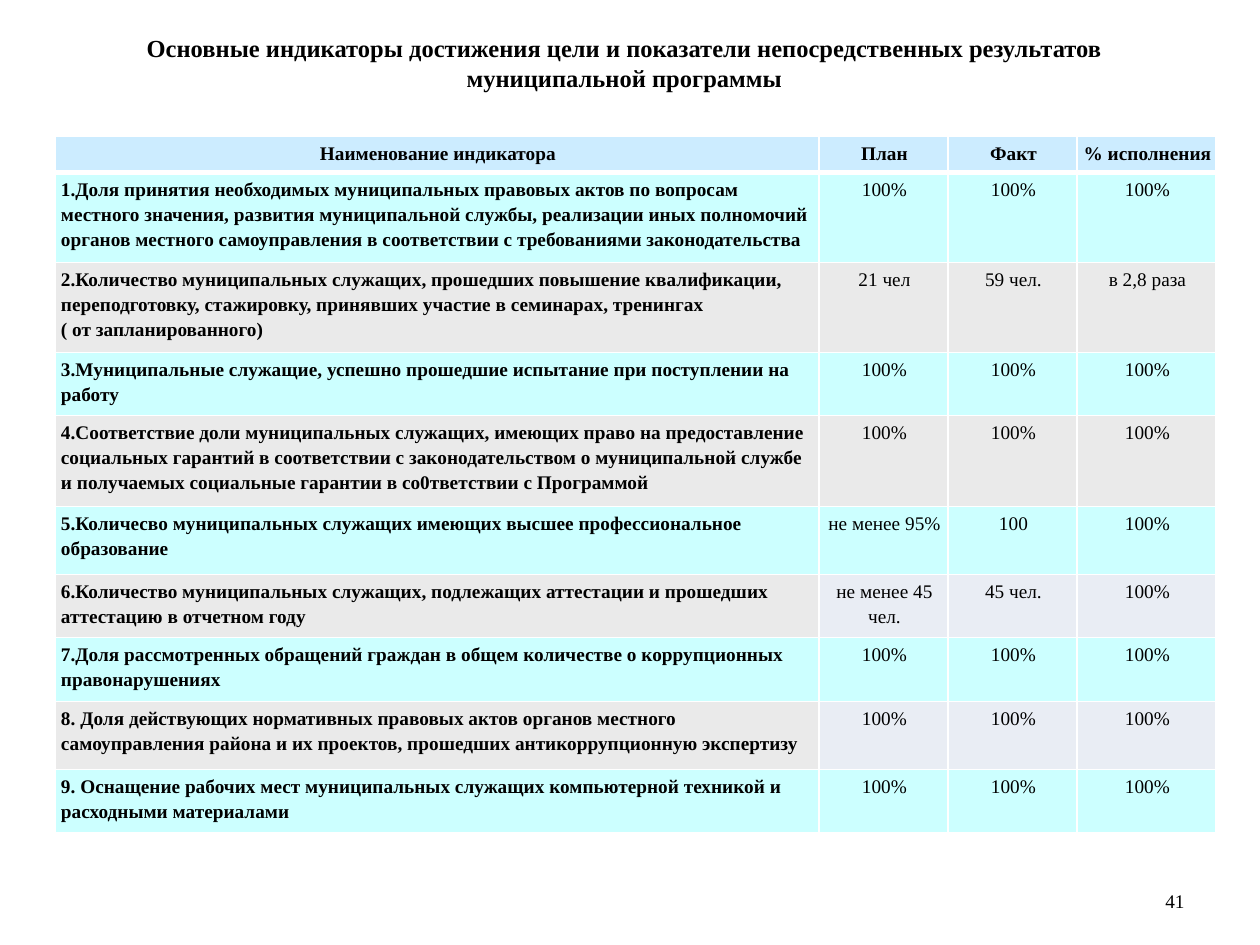
from dataclasses import dataclass

from lxml import etree
from pptx import Presentation
from pptx.dml.color import RGBColor
from pptx.enum import text
from pptx.oxml import ns
from pptx import util as u


@dataclass(frozen=True)
class Theme:
    font: str = "Times New Roman"
    ink: str = "000000"
    border: str = "FFFFFF"
    header: str = "CCECFF"
    odd_row: str = "CCFFFF"
    even_row: str = "EAEAEA"
    even_row_cool: str = "E9EDF4"
    title_size: int = 14
    body_size: int = 11
    table_spacing: float = 1.15


THEME = Theme()
LEFT, CENTER, RIGHT = (text.PP_ALIGN.LEFT, text.PP_ALIGN.CENTER, text.PP_ALIGN.RIGHT)

TITLE = ("Основные индикаторы достижения цели и показатели непосредственных "
         "результатов муниципальной программы")
HEADINGS = ("Наименование индикатора", "План", "Факт", "% исполнения")
COLUMN_WIDTHS = (764, 129, 129, 139)
HEADER_HEIGHT = 36
COOL_ROWS = (6, 8)
FULL = ("100%", "100%", "100%")

# Row height, paragraphs of the indicator name, values.
INDICATORS = (
    (90, ("1.Доля принятия необходимых муниципальных правовых актов по вопросам "
          "местного значения, развития муниципальной службы, реализации иных "
          "полномочий органов местного самоуправления в соответствии с "
          "требованиями законодательства",), FULL),
    (90, ("2.Количество муниципальных служащих, прошедших повышение квалификации, "
          "переподготовку, стажировку, принявших участие в семинарах, тренингах",
          "( от запланированного)"), ("21 чел", "59 чел.", "в 2,8 раза")),
    (63, ("3.Муниципальные служащие, успешно прошедшие испытание при поступлении "
          "на работу",), FULL),
    (91, ("4.Соответствие доли муниципальных служащих, имеющих право на "
          "предоставление социальных гарантий в соответствии с законодательством "
          "о муниципальной службе и получаемых социальные гарантии в "
          "со0тветствии с Программой",), FULL),
    (68, ("5.Количесво муниципальных служащих имеющих высшее профессиональное "
          "образование",), ("не менее 95%", "100", "100%")),
    (63, ("6.Количество муниципальных служащих, подлежащих аттестации и прошедших "
          "аттестацию в отчетном году",), ("не менее 45 чел.", "45 чел.", "100%")),
    (64, ("7.Доля рассмотренных обращений граждан в общем количестве о "
          "коррупционных правонарушениях",), FULL),
    (68, ("8. Доля действующих нормативных правовых актов органов местного "
          "самоуправления района и их проектов, прошедших антикоррупционную "
          "экспертизу",), FULL),
    (63, ("9. Оснащение рабочих мест муниципальных служащих компьютерной техникой "
          "и расходными материалами",), FULL),
)


def px(length):
    return u.Emu(round(length * 914400 / 126))


def write(frame, paragraphs, size, align, bold=False, spacing=None):
    for index, words in enumerate(paragraphs):
        paragraph = frame.add_paragraph() if index else frame.paragraphs[0]
        paragraph.alignment = align
        paragraph.line_spacing = spacing
        run = paragraph.add_run()
        run.text = words
        run.font.name = THEME.font
        run.font.size = u.Pt(size)
        run.font.bold = bold
        run.font.color.rgb = RGBColor.from_string(THEME.ink)


def set_borders(cell, bottom_width):
    """Draw the cell's edges; they must come before its fill in the XML."""
    properties = cell._tc.get_or_add_tcPr()
    for side, width in (("L", 1), ("R", 1), ("T", 1), ("B", bottom_width)):
        line = etree.SubElement(properties, ns.qn(f"a:ln{side}"), w=str(u.Pt(width)))
        fill = etree.SubElement(line, ns.qn("a:solidFill"))
        etree.SubElement(fill, ns.qn("a:srgbClr"), val=THEME.border)


def fill_cell(cell, paragraphs, color, align, bold, bottom_width=1):
    set_borders(cell, bottom_width)
    cell.fill.solid()
    cell.fill.fore_color.rgb = RGBColor.from_string(color)
    cell.margin_left, cell.margin_bottom = px(6), px(6)
    cell.margin_top, cell.margin_right = px(4), px(4)
    write(cell.text_frame, paragraphs, THEME.body_size, align, bold, THEME.table_spacing)


def row_colors(number):
    """Return the fills of the name cell and of the value cells."""
    if number % 2:
        return THEME.odd_row, THEME.odd_row
    values = THEME.even_row_cool if number in COOL_ROWS else THEME.even_row
    return THEME.even_row, values


def add_indicator_table(slide, left, top):
    heights = [HEADER_HEIGHT] + [height for height, _, _ in INDICATORS]
    table = slide.shapes.add_table(
        len(heights), len(HEADINGS), px(left), px(top),
        px(sum(COLUMN_WIDTHS)), px(sum(heights))).table
    table.horz_banding = False
    for column, width in zip(table.columns, COLUMN_WIDTHS):
        column.width = px(width)
    for row, height in zip(table.rows, heights):
        row.height = px(height)

    for column, heading in enumerate(HEADINGS):
        fill_cell(table.cell(0, column), [heading], THEME.header, CENTER, True, 3)
    for number, (_, name, values) in enumerate(INDICATORS, 1):
        name_color, value_color = row_colors(number)
        fill_cell(table.cell(number, 0), name, name_color, LEFT, True)
        for column, value in enumerate(values, 1):
            fill_cell(table.cell(number, column), [value], value_color, CENTER, False)


def add_text(slide, box, words, size, align, anchor, bold=False):
    frame = slide.shapes.add_textbox(*map(px, box)).text_frame
    frame.word_wrap = True
    frame.vertical_anchor = anchor
    write(frame, [words], size, align, bold)


def add_title(slide, box):
    add_text(slide, box, TITLE, THEME.title_size, CENTER, text.MSO_ANCHOR.TOP, True)


def add_page_number(slide, box):
    add_text(slide, box, "41", THEME.body_size, RIGHT, text.MSO_ANCHOR.MIDDLE)


def main():
    presentation = Presentation()
    presentation.slide_width, presentation.slide_height = px(1260), px(945)
    slide = presentation.slides.add_slide(presentation.slide_layouts[6])
    add_page_number(slide, (903, 876, 294, 50))
    add_indicator_table(slide, 55, 136)
    add_title(slide, (44, 27, 1161, 72))
    presentation.save("out.pptx")


if __name__ == "__main__":
    main()
